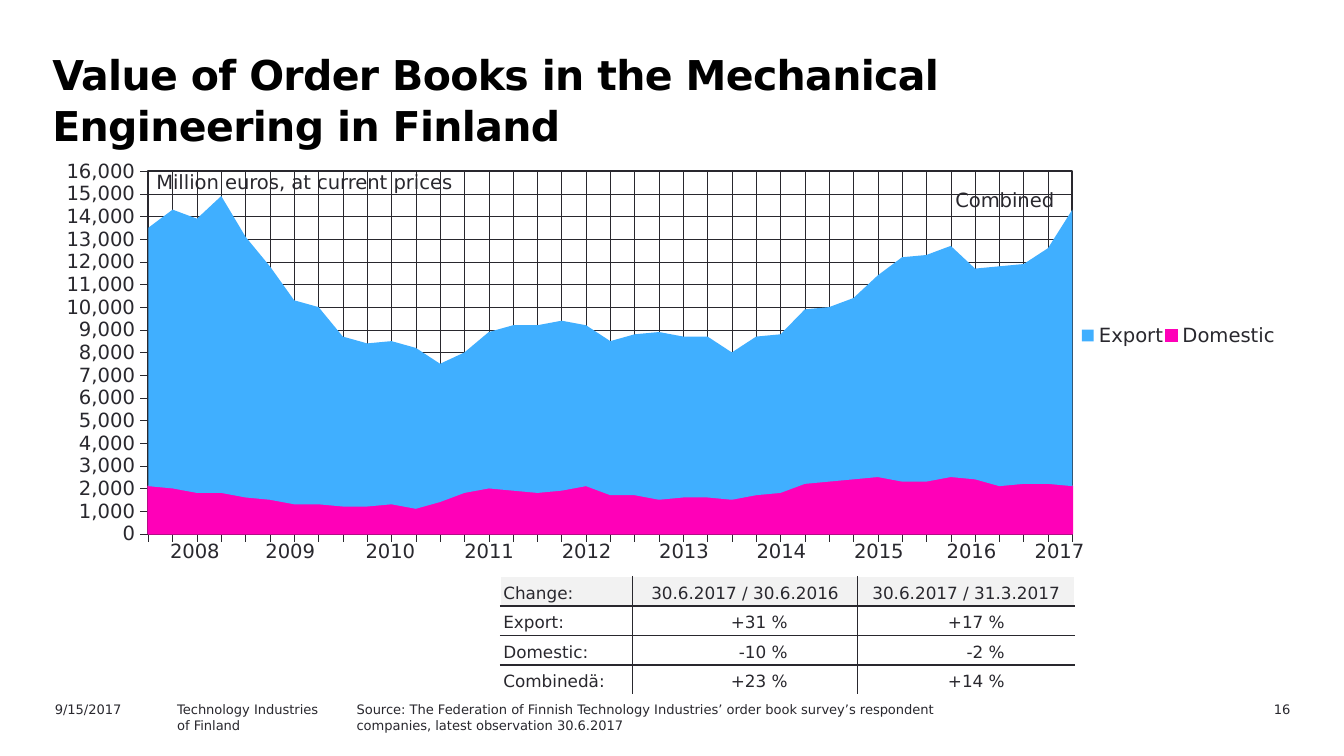
from dataclasses import dataclass

import pptx
import pptx.chart.data
import pptx.dml.color
import pptx.enum.chart
import pptx.enum.dml
import pptx.enum.text
import pptx.oxml
import pptx.oxml.ns
import pptx.util

PX = 4572
FONT = "DejaVu Sans"
INK = pptx.dml.color.RGBColor(0x29, 0x28, 0x2E)
BLACK = pptx.dml.color.RGBColor(0, 0, 0)
WHITE = pptx.dml.color.RGBColor(0xFF, 0xFF, 0xFF)
HEADER_GREY = pptx.dml.color.RGBColor(0xF2, 0xF2, 0xF2)
PINK = pptx.dml.color.RGBColor(0xFF, 0x00, 0xB8)
BLUE = pptx.dml.color.RGBColor(0x40, 0xAF, 0xFF)
PLAIN_TABLE = "{2D5ABB26-0587-4C30-8999-92F81FD0307C}"
QUARTERS = 38
ALIGN = pptx.enum.text.PP_ALIGN
qn = pptx.oxml.ns.qn


@dataclass(frozen=True)
class Box:
    left: int
    top: int
    width: int
    height: int

    def emu(self) -> list[int]:
        return [side * PX for side in (self.left, self.top, self.width, self.height)]


@dataclass(frozen=True)
class Label:
    text: str
    box: Box
    size: float = 7
    align: ALIGN = ALIGN.LEFT
    wrap: bool = True


@dataclass(frozen=True)
class OrderSeries:
    name: str
    values: tuple[int, ...]
    color: pptx.dml.color.RGBColor


LABELS = [
    Label("16", Box(1752, 1034, 188, 36), align=ALIGN.RIGHT),
    Label("Source: The Federation of Finnish Technology Industries’ order book survey’s "
          "respondent companies, latest observation 30.6.2017", Box(511, 1034, 1000, 52)),
    Label("Million euros, at current prices", Box(213, 243, 488, 54), 10.5, wrap=False),
    Label("Combined", Box(1402, 270, 212, 54), 10.5),
    Label("Technology Industries\nof Finland", Box(244, 1034, 360, 36)),
    Label("9/15/2017", Box(62, 1034, 200, 36)),
]
ORDERS = [
    OrderSeries("Domestic", (
        2100, 2000, 1800, 1800, 1600, 1500, 1300, 1300, 1200, 1200, 1300, 1100, 1400,
        1800, 2000, 1900, 1800, 1900, 2100, 1700, 1700, 1500, 1600, 1600, 1500, 1700,
        1800, 2200, 2300, 2400, 2500, 2300, 2300, 2500, 2400, 2100, 2200, 2200, 2100), PINK),
    OrderSeries("Export", (
        11400, 12300, 12100, 13100, 11500, 10300, 9000, 8700, 7500, 7200, 7200, 7100, 6100,
        6200, 6900, 7300, 7400, 7500, 7100, 6800, 7100, 7400, 7100, 7100, 6500, 7000,
        7000, 7700, 7700, 8000, 8900, 9900, 10000, 10200, 9300, 9700, 9700, 10400, 12200), BLUE),
]
CHANGES = [
    ["Change:", "30.6.2017 / 30.6.2016", "30.6.2017 / 31.3.2017"],
    ["Export:", "+31 %", "+17 %"],
    ["Domestic:", "-10 %", "-2 %"],
    ["Combinedä:", "+23 %", "+14 %"],
]
CHANGE_WIDTHS = [196, 335, 323]
YEAR_WIDTHS = [142, 142, 156, 138, 152, 138, 152, 138, 138, 124]


def style_font(font, size: float, color=INK, bold: bool = False) -> None:
    font.name = FONT
    font.size = pptx.util.Pt(size)
    font.bold = bold
    font.color.rgb = color


def write_text(frame, text: str, size: float, align: ALIGN, color=INK, bold: bool = False) -> None:
    frame.text = text
    for paragraph in frame.paragraphs:
        paragraph.alignment = align
        for run in paragraph.runs:
            style_font(run.font, size, color, bold)


def add_label(slide, label: Label) -> None:
    frame = slide.shapes.add_textbox(*label.box.emu()).text_frame
    frame.word_wrap = label.wrap
    write_text(frame, label.text, label.size, label.align)


def add_title(slide, text: str) -> None:
    title = slide.shapes.title
    title.left, title.top, title.width, title.height = Box(56, 62, 1748, 142).emu()
    frame = title.text_frame
    frame.word_wrap = True
    frame.auto_size = pptx.enum.text.MSO_AUTO_SIZE.NONE
    frame.vertical_anchor = pptx.enum.text.MSO_ANCHOR.TOP
    frame.margin_left = 22 * PX
    write_text(frame, text, 22, ALIGN.LEFT, BLACK, True)
    heading = frame.paragraphs[0]
    heading.line_spacing = pptx.util.Pt(27)
    heading.space_before = pptx.util.Pt(0)
    heading.runs[0].font._element.set("spc", "-35")


def place_layout(parent, index: int, x: float, y: float, w: float, h: float, target: str = "") -> None:
    for old in parent.findall(qn("c:layout")):
        parent.remove(old)
    layout = pptx.oxml.parse_xml(
        f'<c:layout {pptx.oxml.ns.nsdecls("c")}><c:manualLayout>{target}'
        '<c:xMode val="edge"/><c:yMode val="edge"/>'
        f'<c:x val="{x}"/><c:y val="{y}"/><c:w val="{w}"/><c:h val="{h}"/>'
        '</c:manualLayout></c:layout>')
    parent.insert(index, layout)


def style_axis(axis) -> None:
    axis.has_major_gridlines = True
    axis.major_tick_mark = pptx.enum.chart.XL_TICK_MARK.OUTSIDE
    axis.minor_tick_mark = pptx.enum.chart.XL_TICK_MARK.NONE
    grid = axis.major_gridlines.format.line
    for line, width in ((axis.format.line, 0.22), (grid, 0.25)):
        line.color.rgb = INK
        line.width = pptx.util.Pt(width)
    grid.dash_style = pptx.enum.dml.MSO_LINE.ROUND_DOT
    style_font(axis.tick_labels.font, 10.5)


def add_order_chart(slide) -> None:
    data = pptx.chart.data.CategoryChartData(number_format="#,##0")
    data.categories = [str(quarter + 1) for quarter in range(QUARTERS)]
    for orders in ORDERS:
        data.add_series(orders.name, orders.values)
    chart = slide.shapes.add_chart(
        pptx.enum.chart.XL_CHART_TYPE.AREA_STACKED, *Box(83, 237, 1836, 610).emu(), data).chart
    chart.has_title = False
    style_font(chart.font, 10.5)
    plot = chart.plots[0]
    plot.vary_by_categories = False
    for series, orders in zip(plot.series, ORDERS):
        series.format.fill.solid()
        series.format.fill.fore_color.rgb = orders.color
        series.format.line.fill.background()
    domestic_outline = plot.series[0].format.line
    domestic_outline.color.rgb = PINK
    domestic_outline.width = pptx.util.Pt(0.88)

    style_axis(chart.category_axis)
    chart.category_axis.tick_label_position = pptx.enum.chart.XL_TICK_LABEL_POSITION.NONE
    euros = chart.value_axis
    style_axis(euros)
    euros.minimum_scale, euros.maximum_scale, euros.major_unit = 0, 16000, 1000
    euros.tick_labels.number_format = "#,##0"
    euros.tick_labels.number_format_is_linked = False
    for crossing in euros._element.iter(qn("c:crossBetween")):
        crossing.set("val", "midCat")

    chart.has_legend = True
    chart.legend.position = pptx.enum.chart.XL_LEGEND_POSITION.RIGHT
    chart.legend.include_in_layout = False
    style_font(chart.legend.font, 10.5)
    place_layout(chart.legend._element, 1, 0.83, 0.4, 0.16, 0.06)
    plot_area = chart._chartSpace.chart.plotArea
    place_layout(plot_area, 0, 0.075, 0.029, 0.749, 0.885, '<c:layoutTarget val="inner"/>')
    plot_area.append(pptx.oxml.parse_xml(
        f'<c:spPr {pptx.oxml.ns.nsdecls("c", "a")}><a:noFill/><a:ln w="12700">'
        f'<a:solidFill><a:srgbClr val="{INK}"/></a:solidFill></a:ln></c:spPr>'))


def add_plain_table(slide, box: Box, widths: list[int], row_count: int):
    frame = slide.shapes.add_table(row_count, len(widths), *box.emu())
    for style in frame._element.iter(qn("a:tableStyleId")):
        style.text = PLAIN_TABLE
    table = frame.table
    table.first_row = table.horz_banding = False
    for column, width in zip(table.columns, widths):
        column.width = width * PX
    return table


def set_borders(cell, colors: dict) -> None:
    properties = cell._tc.get_or_add_tcPr()
    for index, (side, color) in enumerate(colors.items()):
        properties.insert(index, pptx.oxml.parse_xml(
            f'<a:{side} {pptx.oxml.ns.nsdecls("a")} w="12700"><a:solidFill>'
            f'<a:srgbClr val="{color}"/></a:solidFill></a:{side}>'))


def add_change_table(slide) -> None:
    box = Box(745, 858, sum(CHANGE_WIDTHS), 176)
    table = add_plain_table(slide, box, CHANGE_WIDTHS, len(CHANGES))
    last_row, last_column = len(CHANGES) - 1, len(CHANGES[0]) - 1
    for row, texts in enumerate(CHANGES):
        for column, text in enumerate(texts):
            cell = table.cell(row, column)
            is_value = row > 0 and column > 0
            cell.margin_left = cell.margin_top = cell.margin_bottom = 4 * PX
            cell.margin_right = (104 if is_value else 4) * PX
            cell.vertical_anchor = pptx.enum.text.MSO_ANCHOR.BOTTOM
            align = ALIGN.RIGHT if is_value else ALIGN.CENTER if column else ALIGN.LEFT
            write_text(cell.text_frame, text, 9, align)
            if row in (0, last_row):
                cell.fill.solid()
                cell.fill.fore_color.rgb = WHITE if row else HEADER_GREY
            else:
                cell.fill.background()
            set_borders(cell, {
                "lnL": INK if column else WHITE,
                "lnR": INK if column < last_column else WHITE,
                "lnT": INK if row else WHITE,
                "lnB": INK if row < last_row else WHITE,
            })


def add_year_scale(slide) -> None:
    table = add_plain_table(slide, Box(219, 794, sum(YEAR_WIDTHS), 64), YEAR_WIDTHS, 1)
    for index, cell in enumerate(table.rows[0].cells):
        cell.fill.background()
        write_text(cell.text_frame, str(2008 + index), 10.5, ALIGN.CENTER)


def main() -> None:
    deck = pptx.Presentation()
    deck.slide_width, deck.slide_height = 2000 * PX, 1125 * PX
    slide = deck.slides.add_slide(deck.slide_layouts[5])
    add_title(slide, "Value of Order Books in the Mechanical Engineering in Finland")
    add_order_chart(slide)
    add_change_table(slide)
    add_year_scale(slide)
    for label in LABELS:
        add_label(slide, label)
    deck.save("out.pptx")


if __name__ == "__main__":
    main()
